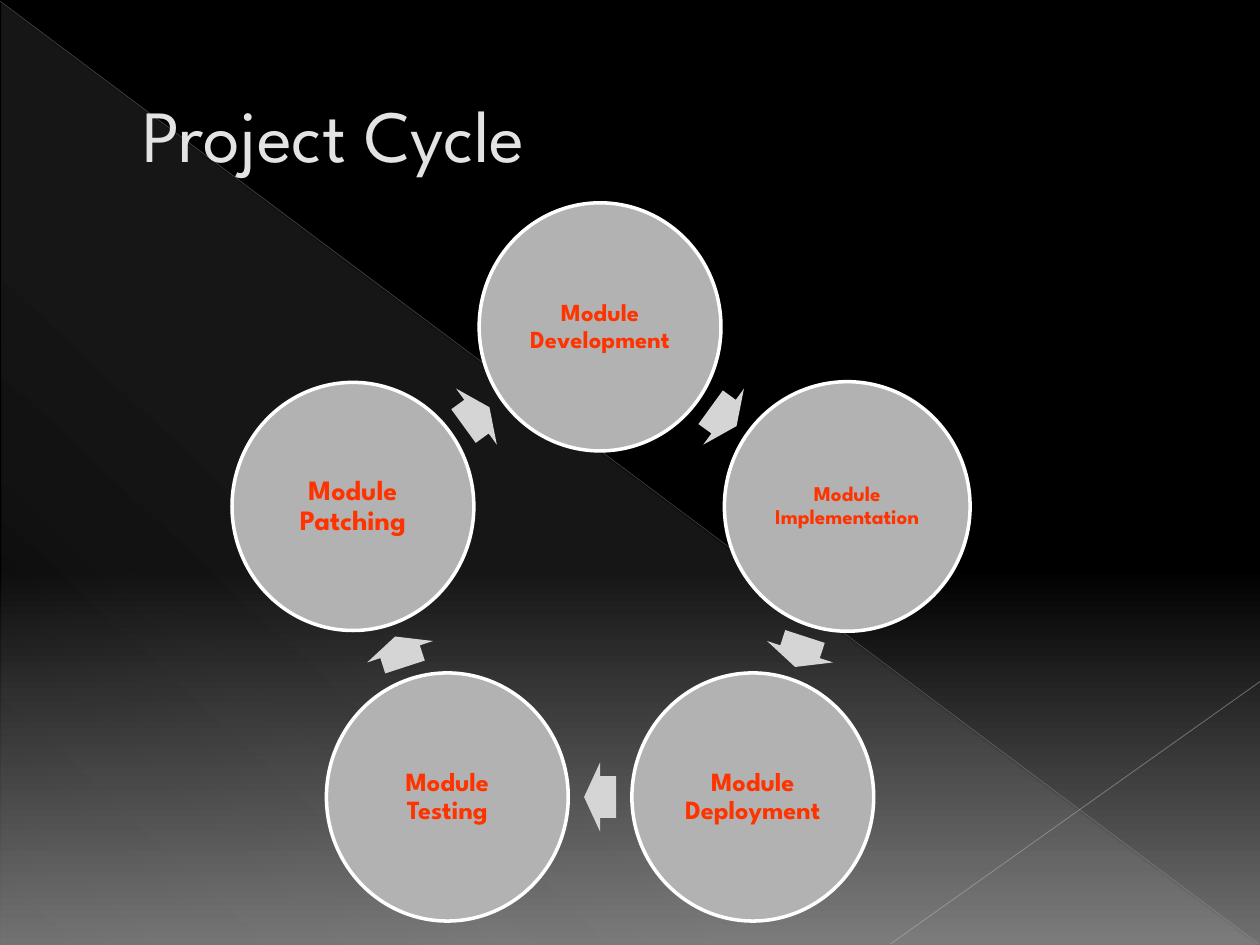
import math
from typing import NamedTuple

from lxml import etree
from pptx import Presentation
from pptx.dml.color import RGBColor
from pptx.enum import shapes, text
from pptx.oxml.ns import qn
from pptx.util import Pt

COLORS = {
    "black": "000000",
    "floor": "707070",
    "sheen": "F8F8F8",
    "diagonal": "B4B4B4",
    "corner": "BDBDBD",
    "title": "E3E3E3",
    "title_outline": "999999",
    "circle": "B2B2B2",
    "ring": "FFFFFF",
    "arrow": "D5D5D5",
    "label": "FF3300",
}
FONT = "League Spartan"
CENTER_X, CENTER_Y, RADIUS = 342.9, 335.3, 148.5


class Stage(NamedTuple):
    label: str
    font_size: float
    width: float = 138.2
    height: float = 141.8


class Stop(NamedTuple):
    position: int
    color: str
    opacity: int = 100


class Ray(NamedTuple):
    start: tuple[float, float]
    end: tuple[float, float]
    color: str
    width: float
    opacity: int


STAGES = [
    Stage("Module Development", 14),
    Stage("Module Implementation", 12, 140.4, 142.6),
    Stage("Module Deployment", 15),
    Stage("Module Testing", 15),
    Stage("Module Patching", 16),
]
RAYS = [
    Ray((0, 0.7), (719.3, 539.3), "diagonal", 0.39, 35),
    Ray((720, 389.5), (509, 539.3), "corner", 0.47, 45),
]


def rgb(name: str) -> RGBColor:
    return RGBColor.from_string(COLORS[name])


def add_alpha(color_element, opacity: int) -> None:
    etree.SubElement(color_element, qn("a:alpha"), val=str(opacity * 1000))


def set_gradient(fill, owner, stops: list[Stop], angle: float) -> None:
    """Fill with a linear gradient; the angle runs clockwise."""
    fill.gradient()
    fill.gradient_angle = 360 - angle
    stop_list = next(owner.iter(qn("a:gsLst")))
    for old_stop in list(stop_list):
        stop_list.remove(old_stop)
    for stop in stops:
        entry = etree.SubElement(stop_list, qn("a:gs"), pos=str(stop.position * 1000))
        color = etree.SubElement(entry, qn("a:srgbClr"), val=COLORS[stop.color])
        if stop.opacity < 100:
            add_alpha(color, stop.opacity)


def write_text(frame, content: str, *, size: float, color: str, bold=False,
               align=text.PP_ALIGN.LEFT, margin=None, line_spacing=None):
    frame.word_wrap = True
    frame.auto_size = text.MSO_AUTO_SIZE.NONE
    frame.vertical_anchor = text.MSO_ANCHOR.MIDDLE
    if margin is not None:
        frame.margin_left = frame.margin_right = Pt(margin)
        frame.margin_top = frame.margin_bottom = Pt(margin)
    paragraph = frame.paragraphs[0]
    paragraph.alignment = align
    paragraph.line_spacing = line_spacing
    run = paragraph.add_run()
    run.text = content
    run.font.name = FONT
    run.font.size = Pt(size)
    run.font.bold = bold
    run.font.color.rgb = rgb(color)
    return paragraph


def add_shape(slide, kind, center_x: float, center_y: float,
              width: float, height: float):
    shape = slide.shapes.add_shape(
        kind, Pt(center_x - width / 2), Pt(center_y - height / 2), Pt(width), Pt(height))
    shape.shadow.inherit = False
    shape.line.fill.background()
    return shape


def add_ray(slide, ray: Ray) -> None:
    points = [Pt(value) for value in (*ray.start, *ray.end)]
    connector = slide.shapes.add_connector(shapes.MSO_CONNECTOR.STRAIGHT, *points)
    connector.line.color.rgb = rgb(ray.color)
    connector.line.width = Pt(ray.width)
    properties = connector._element.spPr
    add_alpha(next(properties.iter(qn("a:srgbClr"))), ray.opacity)
    etree.SubElement(properties, qn("a:effectLst"))


def add_backdrop(slide) -> None:
    set_gradient(slide.background.fill, slide._element,
                 [Stop(0, "black"), Stop(60, "black"), Stop(100, "floor")], 90)
    triangle = add_shape(slide, shapes.MSO_SHAPE.RIGHT_TRIANGLE, 360, 270.7, 718.6, 538.6)
    set_gradient(triangle.fill, triangle._element,
                 [Stop(0, "sheen", 10), Stop(70, "sheen", 8), Stop(100, "sheen", 1)], 133)
    for ray in RAYS:
        add_ray(slide, ray)


def add_title(slide) -> None:
    title = slide.shapes.title
    title.left, title.top, title.width, title.height = Pt(36), Pt(21), Pt(648), Pt(110)
    paragraph = write_text(title.text_frame, "Project Cycle", size=42, color="title")
    paragraph_properties = paragraph._p.get_or_add_pPr()
    paragraph_properties.set("marL", str(Pt(38)))
    paragraph_properties.set("indent", "0")
    outline = etree.Element(qn("a:ln"), w=str(Pt(0.5)))
    fill = etree.SubElement(outline, qn("a:solidFill"))
    etree.SubElement(fill, qn("a:srgbClr"), val=COLORS["title_outline"])
    paragraph.runs[0].font._element.insert(0, outline) if hasattr(
        paragraph.runs[0].font, "_element") else paragraph.runs[0]._r.get_or_add_rPr().insert(0, outline)
    slide.shapes._spTree.append(title._element)  # in front of the backdrop


def orbit_point(degrees: float, radius: float) -> tuple[float, float]:
    """Point on the cycle, clockwise from the top."""
    angle = math.radians(degrees)
    return CENTER_X + radius * math.sin(angle), CENTER_Y - radius * math.cos(angle)


def add_stage(slide, stage: Stage, degrees: float) -> None:
    circle = add_shape(slide, shapes.MSO_SHAPE.OVAL, *orbit_point(degrees, RADIUS),
                       stage.width, stage.height)
    circle.fill.solid()
    circle.fill.fore_color.rgb = rgb("circle")
    circle.line.color.rgb = rgb("ring")
    circle.line.width = Pt(2)
    write_text(circle.text_frame, stage.label, size=stage.font_size, color="label",
               bold=True, align=text.PP_ALIGN.CENTER, margin=1.4, line_spacing=0.9)


def add_arrow(slide, degrees: float, chord_radius: float) -> None:
    arrow = add_shape(slide, shapes.MSO_SHAPE.RIGHT_ARROW,
                      *orbit_point(degrees, chord_radius), 18.3, 39.6)
    arrow.adjustments[0], arrow.adjustments[1] = 0.6, 0.5
    arrow.rotation = degrees
    arrow.fill.solid()
    arrow.fill.fore_color.rgb = rgb("arrow")


def main() -> None:
    presentation = Presentation()
    presentation.slide_width, presentation.slide_height = Pt(720), Pt(540)
    slide = presentation.slides.add_slide(presentation.slide_layouts[5])
    add_backdrop(slide)
    add_title(slide)
    step = 360 / len(STAGES)
    chord_radius = RADIUS * math.cos(math.radians(step / 2))
    for index, stage in enumerate(STAGES):
        add_stage(slide, stage, index * step)
        add_arrow(slide, (index + 0.5) * step, chord_radius)
    presentation.save("out.pptx")


if __name__ == "__main__":
    main()
